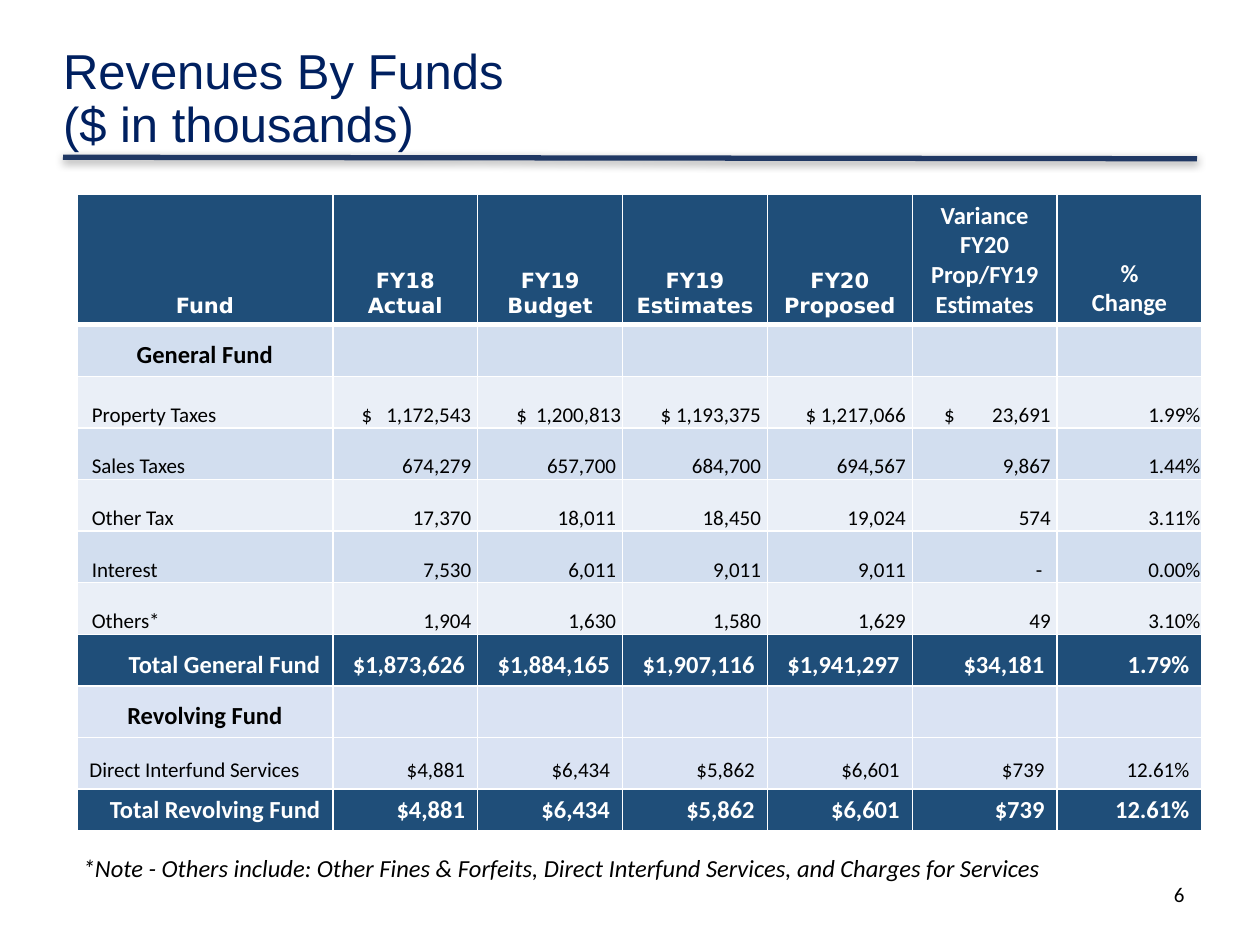
from dataclasses import dataclass
from lxml.etree import SubElement
from pptx import Presentation
from pptx.dml.color import RGBColor
from pptx.enum.shapes import MSO_CONNECTOR
from pptx.enum.text import MSO_ANCHOR, MSO_AUTO_SIZE, PP_ALIGN
from pptx.oxml.ns import qn
from pptx.util import Cm, Pt

# Content
TITLE = ["Revenues By Funds", "($ in thousands)"]
NOTE = ("*Note - Others include: Other Fines & Forfeits, Direct Interfund "
        "Services, and Charges for Services")
PAGE = "6"
# Each row: kind, cells
ROWS = [
    ("head", ["Fund", "FY18\nActual", "FY19\nBudget", "FY19\nEstimates",
              "FY20\nProposed", "Variance FY20 Prop/FY19 Estimates", "%\nChange"]),
    ("group", ["General Fund"]),
    ("item", ["Property Taxes", "$\t1,172,543", "$\t1,200,813", "$ 1,193,375",
              "$ 1,217,066", "$\t23,691", "1.99%"]),
    ("item", ["Sales Taxes", "674,279", "657,700", "684,700", "694,567", "9,867", "1.44%"]),
    ("item", ["Other Tax", "17,370", "18,011", "18,450", "19,024", "574", "3.11%"]),
    ("item", ["Interest", "7,530", "6,011", "9,011", "9,011", "-", "0.00%"]),
    ("item", ["Others*", "1,904", "1,630", "1,580", "1,629", "49", "3.10%"]),
    ("total", ["Total General Fund", "$1,873,626", "$1,884,165", "$1,907,116",
               "$1,941,297", "$34,181", "1.79%"]),
    ("group", ["Revolving Fund"]),
    ("plain", ["Direct Interfund Services", "$4,881", "$6,434", "$5,862",
               "$6,601", "$739", "12.61%"]),
    ("total", ["Total Revolving Fund", "$4,881", "$6,434", "$5,862",
               "$6,601", "$739", "12.61%"]),
]
WIDE = [5.16] + [2.92] * 6
HIGH = [2.62] + [1.04] * 9 + [0.84]
# Dollar signs set apart from their number: cell -> left inset, right edge
SPLIT = {(2, 1): (0.58, 2.79), (2, 2): (0.78, 2.89), (2, 5): (0.64, 2.79)}


@dataclass(frozen=True)
class Theme:
    navy: str = "002060"
    rule: str = "203864"
    dark: str = "1F4E79"
    bands: tuple = ("EAEFF7", "D2DEEF")
    pale: str = "DAE3F3"
    white: str = "FFFFFF"
    black: str = "000000"
    face: str = "Calibri"
    head: str = "DejaVu Sans"
    title: str = "Arial"
    big: int = 28
    mid: int = 14
    small: int = 12


T = Theme()
LEFT, MID, RIGHT = PP_ALIGN.LEFT, PP_ALIGN.CENTER, PP_ALIGN.RIGHT


def add_run(para, text, size, color, face=T.face, bold=False, ital=False):
    run = para.add_run()
    run.text = text
    font = run.font
    font.name, font.size, font.bold, font.italic = face, Pt(size), bold, ital
    font.color.rgb = RGBColor.from_string(color)


def add_note(slide, box, text, size, align, ital=False):
    frame = slide.shapes.add_textbox(*map(Cm, box)).text_frame
    frame.word_wrap = True
    para = frame.paragraphs[0]
    para.alignment = align
    add_run(para, text, size, T.black, ital=ital)


def add_edges(cell, row):
    props = cell._tc.get_or_add_tcPr()
    thick = {"lnT": row == 1, "lnB": row == 0}
    for side in ("lnL", "lnR", "lnT", "lnB"):
        edge = SubElement(props, qn("a:" + side), w=str(Pt(3 if thick.get(side) else 1)))
        SubElement(SubElement(edge, qn("a:solidFill")), qn("a:srgbClr"), val=T.white)


def add_tab(para, stop):
    tabs = SubElement(para._p.get_or_add_pPr(), qn("a:tabLst"))
    SubElement(tabs, qn("a:tab"), pos=str(Cm(stop)), algn="r")


def row_fill(kind, row):
    if kind in ("head", "total"):
        return T.dark
    return T.pale if row > 7 else T.bands[row % 2]


def set_insets(cell, col, text):
    cell.margin_top, cell.margin_bottom = Cm(0.03), 0
    cell.margin_left = Cm(0.03 if col else 0.3)
    ends = {"-": 0.3}
    cell.margin_right = Cm(0.03 if col == 6 else ends.get(text, 0.13))


def fill_cell(cell, kind, row, col, text):
    add_edges(cell, row)
    cell.fill.solid()
    cell.fill.fore_color.rgb = RGBColor.from_string(row_fill(kind, row))
    cell.vertical_anchor = MSO_ANCHOR.BOTTOM
    if not text:
        return
    if kind == "item":
        set_insets(cell, col, text)
    align = RIGHT if col or kind == "total" else LEFT
    if kind in ("head", "group"):
        align = MID
    bold = kind in ("head", "group", "total")
    lead = kind == "head" and col < 5
    size = T.mid if bold and not lead else T.small
    color = T.white if kind in ("head", "total") else T.black
    frame = cell.text_frame
    for i, line in enumerate(text.split("\n")):
        para = frame.add_paragraph() if i else frame.paragraphs[0]
        para.alignment = align
        if (row, col) in SPLIT:
            start, end = SPLIT[row, col]
            cell.margin_left, cell.margin_right = Cm(start), 0
            para.alignment = LEFT
            add_tab(para, end - start)
        add_run(para, line, size, color, T.head if lead else T.face, bold)


deck = Presentation()
deck.slide_width, deck.slide_height = Cm(25.4), Cm(19.05)
slide = deck.slides.add_slide(deck.slide_layouts[5])

# Title
title = slide.shapes.title
title.left, title.top, title.width, title.height = map(Cm, (1.27, 0.84, 17.42, 2.34))
frame = title.text_frame
frame.auto_size = MSO_AUTO_SIZE.NONE
frame.vertical_anchor = MSO_ANCHOR.MIDDLE
frame.margin_left = frame.margin_right = frame.margin_top = frame.margin_bottom = 0
para = frame.paragraphs[0]
para.alignment, para.line_spacing = LEFT, 0.9
for i, line in enumerate(TITLE):
    if i:
        para.add_line_break()
    add_run(para, line, T.big, T.navy, T.title)

# Rule under the title, with a soft shadow
rule = slide.shapes.add_connector(
    MSO_CONNECTOR.STRAIGHT, Cm(1.27), Cm(3.17), Cm(24.13), Cm(3.2))
rule.line.width = Pt(3)
rule.line.color.rgb = RGBColor.from_string(T.rule)
glow = SubElement(rule._element.spPr, qn("a:effectLst"))
shade = SubElement(glow, qn("a:outerShdw"), blurRad=str(Pt(5)), dist=str(Pt(1.6)),
                   dir="5400000", rotWithShape="0")
tone = SubElement(shade, qn("a:srgbClr"), val=T.black)
SubElement(tone, qn("a:alpha"), val="38000")

# Page number
add_note(slide, (18.21, 17.65, 5.92, 1.02), PAGE, T.small, RIGHT)

# Table
grid = slide.shapes.add_table(len(ROWS), len(WIDE), Cm(1.55), Cm(3.92),
                              Cm(sum(WIDE)), Cm(sum(HIGH))).table
for col, wide in zip(grid.columns, WIDE):
    col.width = Cm(wide)
for r, (kind, cells) in enumerate(ROWS):
    grid.rows[r].height = Cm(HIGH[r])
    for c in range(len(WIDE)):
        fill_cell(grid.cell(r, c), kind, r, c, cells[c] if c < len(cells) else "")

# Footnote
add_note(slide, (1.42, 17.07, 20.93, 0.86), NOTE, T.mid, LEFT, ital=True)

deck.save("out.pptx")
